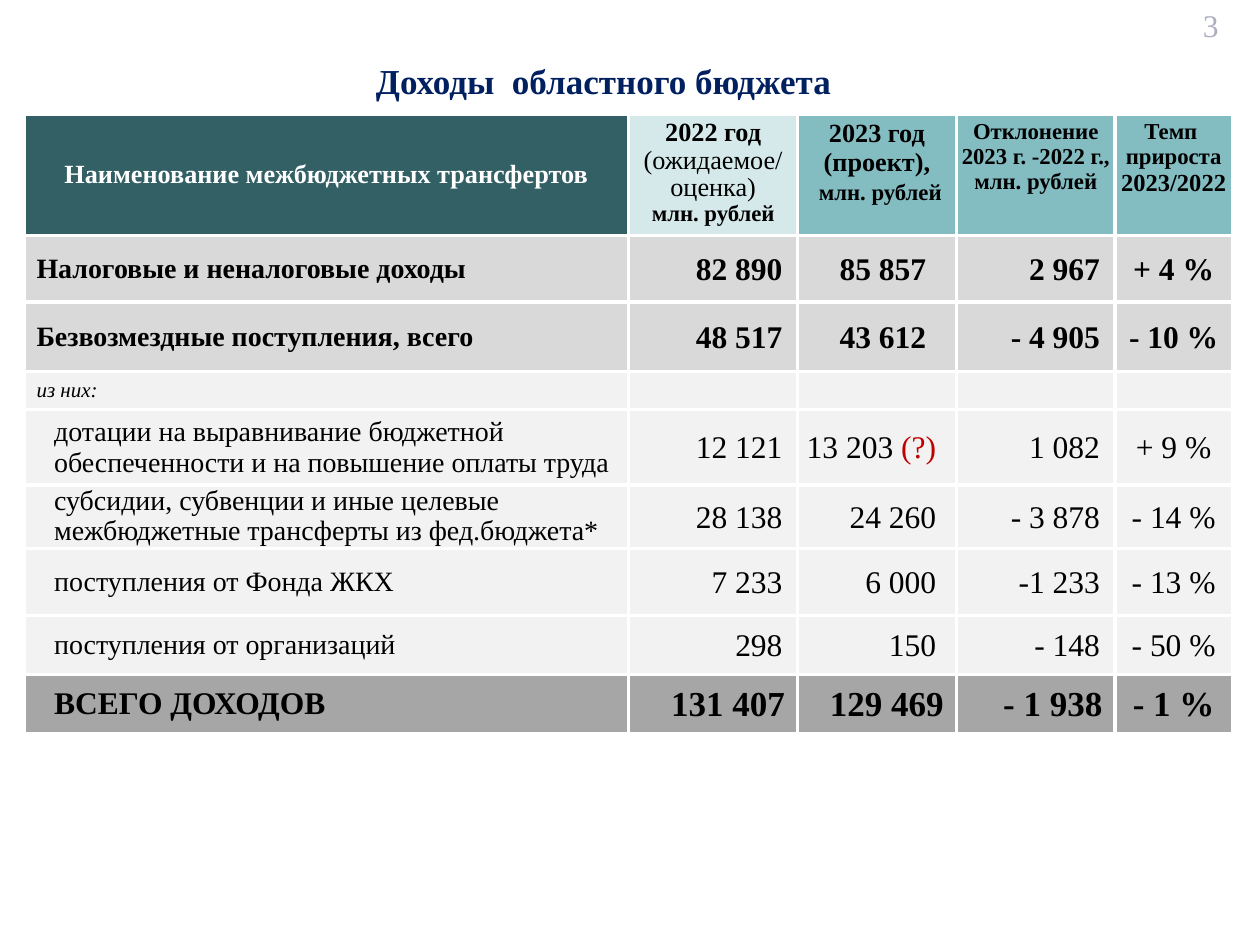
from dataclasses import dataclass
from typing import NamedTuple

from lxml import etree
from pptx import Presentation
from pptx.dml.color import RGBColor
from pptx.enum.text import MSO_ANCHOR, PP_ALIGN
from pptx.oxml.ns import qn
from pptx.util import Inches, Pt

LEFT, CENTER, RIGHT = PP_ALIGN.LEFT, PP_ALIGN.CENTER, PP_ALIGN.RIGHT
TOP, MIDDLE, BOTTOM = MSO_ANCHOR.TOP, MSO_ANCHOR.MIDDLE, MSO_ANCHOR.BOTTOM


@dataclass(frozen=True)
class Theme:
    font: str = "Times New Roman"
    ink: str = "000000"
    white: str = "FFFFFF"
    title: str = "002060"
    page_number: str = "ADAFC0"
    alert: str = "C00000"
    head_dark: str = "326065"
    head_pale: str = "D6E9EA"
    head_teal: str = "83BCC1"
    group: str = "D9D9D9"
    detail: str = "F2F2F2"
    total: str = "A6A6A6"
    title_size: int = 20
    total_size: int = 20
    value_size: int = 18
    label_size: int = 16
    head_size: int = 15
    rate_size: int = 14
    unit_size: int = 13
    note_size: int = 12
    border: float = 2.25
    tight: float = 0.95


THEME = Theme()


class Span(NamedTuple):
    text: str
    size: int
    bold: bool = False
    color: str = THEME.ink
    italic: bool = False


class Insets(NamedTuple):
    left: float = 0.1
    top: float = 0.05
    right: float = 0.1
    bottom: float = 0.05


class RowStyle(NamedTuple):
    fill: str
    bold: bool
    label_size: int
    value_size: int
    label_insets: Insets
    value_insets: tuple[Insets, ...]
    spacing: float | None = None


class BudgetRow(NamedTuple):
    label: str
    values: tuple[str, ...]
    style: RowStyle


COLUMNS = (4.8, 1.34, 1.26, 1.26, 0.93)
ROWS = (0.69, 0.53, 0.55, 0.29, 0.6, 0.37, 0.53, 0.47, 0.47)
HEAD_INSETS = Insets(0.04, 0.04, 0.04, 0)
INDENT = Insets(0.24, 0, 0, 0)


def value_insets(*rights: float) -> tuple[Insets, ...]:
    return tuple(Insets(0.01, 0.01, right, 0) for right in rights)


GROUP = RowStyle(THEME.group, True, THEME.label_size, THEME.value_size,
                 Insets(), value_insets(0.12, 0.24, 0.12, 0.01))
DETAIL = RowStyle(THEME.detail, False, THEME.label_size, THEME.value_size,
                  INDENT, value_insets(0.12, 0.16, 0.12, 0.01))
TIGHT_DETAIL = DETAIL._replace(spacing=THEME.tight)
TOTAL = RowStyle(THEME.total, True, THEME.value_size, THEME.total_size,
                 INDENT, (Insets(),) * 4)
NOTE = RowStyle(THEME.detail, False, THEME.note_size, THEME.note_size,
                Insets(), value_insets(0.01, 0.01, 0.01, 0.01))

# Each heading: fill, line spacing, then paragraphs of spans
HEADINGS = (
    (THEME.head_pale, THEME.tight,
     [[Span("2022 год ", THEME.head_size, True),
       Span("(ожидаемое/ оценка)", THEME.head_size)],
      [Span("млн. рублей", THEME.unit_size, True)]]),
    (THEME.head_teal, None,
     [[Span("2023 год", THEME.head_size, True)],
      [Span("(проект),", THEME.head_size, True)],
      [Span(" ", THEME.head_size, True),
       Span("млн. рублей", THEME.unit_size, True)]]),
    (THEME.head_teal, None,
     [[Span("Отклонение 2023 г. -2022 г., млн. рублей", THEME.unit_size, True)]]),
    (THEME.head_teal, None,
     [[Span("Темп  прироста ", THEME.unit_size, True),
       Span("2023/2022", THEME.rate_size, True)]]),
)
QUERY = "(?)"
BUDGET = (
    BudgetRow("Налоговые и неналоговые доходы",
              ("82 890", "85 857", "2 967", "+ 4 %"), GROUP),
    BudgetRow("Безвозмездные поступления, всего",
              ("48 517", "43 612", "- 4 905", "- 10 %"), GROUP),
    BudgetRow("из них:", ("", "", "", ""), NOTE),
    BudgetRow("дотации на выравнивание бюджетной обеспеченности и на повышение оплаты труда",
              ("12 121", "13 203 (?)", "1 082", "+ 9 %"), DETAIL),
    BudgetRow("субсидии, субвенции и иные целевые межбюджетные трансферты из фед.бюджета*",
              ("28 138", "24 260", "- 3 878", "- 14 %"), TIGHT_DETAIL),
    BudgetRow("поступления от Фонда ЖКХ",
              ("7 233", "6 000", " -1 233", "- 13 %"), DETAIL),
    BudgetRow("поступления от организаций",
              ("298", "150", "- 148", "- 50 %"), DETAIL),
    BudgetRow("ВСЕГО ДОХОДОВ",
              ("131 407", "129 469", "- 1 938", "- 1 %"), TOTAL),
)


def write(frame, paragraphs: list[list[Span]], align, spacing: float | None = None) -> None:
    for index, spans in enumerate(paragraphs):
        para = frame.paragraphs[0] if index == 0 else frame.add_paragraph()
        para.alignment = align
        para.line_spacing = spacing
        for span in spans:
            run = para.add_run()
            run.text = span.text
            run.font.name = THEME.font
            run.font.size = Pt(span.size)
            run.font.bold = span.bold
            run.font.italic = span.italic
            run.font.color.rgb = RGBColor.from_string(span.color)


def add_borders(cell) -> None:
    properties = cell._tc.get_or_add_tcPr()
    for side in ("a:lnL", "a:lnR", "a:lnT", "a:lnB"):
        line = etree.SubElement(properties, qn(side), w=str(Pt(THEME.border)))
        fill = etree.SubElement(line, qn("a:solidFill"))
        etree.SubElement(fill, qn("a:srgbClr"), val=THEME.white)


def fill_cell(cell, paragraphs: list[list[Span]], fill: str, align, anchor=MIDDLE,
              insets: Insets = Insets(), spacing: float | None = None) -> None:
    add_borders(cell)
    cell.fill.solid()
    cell.fill.fore_color.rgb = RGBColor.from_string(fill)
    cell.vertical_anchor = anchor
    cell.margin_left, cell.margin_top, cell.margin_right, cell.margin_bottom = map(Inches, insets)
    if paragraphs:
        write(cell.text_frame, paragraphs, align, spacing)
    else:  # keep an empty cell from stretching its row
        etree.SubElement(cell.text_frame.paragraphs[0]._p, qn("a:endParaRPr"),
                         sz=str(THEME.note_size * 100))


def value_spans(text: str, style: RowStyle) -> list[list[Span]]:
    number, mark, _ = text.partition(QUERY)
    spans = [Span(number, style.value_size, style.bold)] if number else []
    if mark:
        spans.append(Span(mark, style.value_size, style.bold, THEME.alert))
    return [spans] if spans else []


def add_budget_table(page) -> None:
    height = Inches(5.08)
    frame = page.shapes.add_table(len(ROWS), len(COLUMNS), Inches(0.19), Inches(0.91),
                                  Inches(9.59), height)
    table = frame.table
    for column, width in zip(table.columns, COLUMNS):
        column.width = Inches(width)
    for row, row_height in zip(table.rows, ROWS):
        row.height = Inches(row_height)
    frame.height = height

    # Heading row
    name = Span("Наименование межбюджетных трансфертов", THEME.head_size, True, THEME.white)
    fill_cell(table.cell(0, 0), [[name]], THEME.head_dark, CENTER)
    for column, (fill, spacing, paragraphs) in enumerate(HEADINGS, 1):
        fill_cell(table.cell(0, column), paragraphs, fill, CENTER, TOP, HEAD_INSETS, spacing)

    # Budget rows
    for index, (label, values, style) in enumerate(BUDGET, 1):
        span = Span(label, style.label_size, style.bold, italic=style is NOTE)
        fill_cell(table.cell(index, 0), [[span]], style.fill, LEFT,
                  insets=style.label_insets, spacing=style.spacing)
        for column, (text, insets) in enumerate(zip(values, style.value_insets), 1):
            align = CENTER if column == len(values) else RIGHT
            fill_cell(table.cell(index, column), value_spans(text, style),
                      style.fill, align, insets=insets)


def main() -> None:
    deck = Presentation()
    deck.slide_width, deck.slide_height = Inches(10), Inches(7.5)
    page = deck.slides.add_slide(deck.slide_layouts[5])

    # Title
    title = page.shapes.title
    title.left, title.top, title.width, title.height = map(Inches, (0, 0.4, 9.65, 0.47))
    title.text_frame.vertical_anchor = MIDDLE
    write(title.text_frame, [[Span("Доходы  областного бюджета ", THEME.title_size,
                                   True, THEME.title)]], CENTER)

    # Page number
    box = page.shapes.add_textbox(*map(Inches, (8.94, 0, 0.83, 0.4)))
    box.text_frame.word_wrap = True
    box.text_frame.vertical_anchor = BOTTOM
    write(box.text_frame, [[Span("3", THEME.value_size, color=THEME.page_number)]], RIGHT)

    add_budget_table(page)
    deck.save("out.pptx")


if __name__ == "__main__":
    main()
